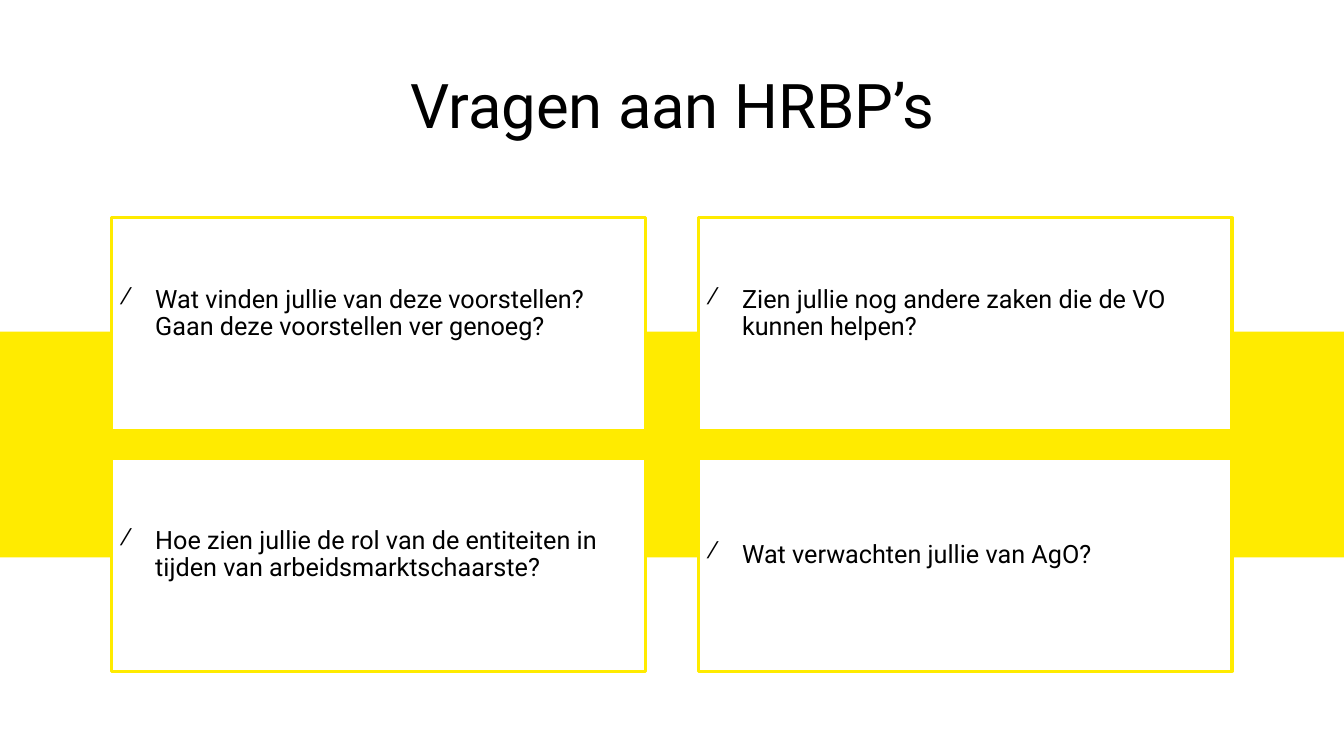
from lxml import etree
from pptx import Presentation
from pptx import util as u
from pptx.dml.color import RGBColor
from pptx.enum import shapes, text
from pptx.oxml import ns

COLORS = {"yellow": "FFEB00", "white": "FFFFFF", "black": "000000"}
TITLE_FONT = {"name": "Roboto", "size": u.Pt(44), "bold": False}
QUESTION_FONT = {"name": "Roboto", "size": u.Pt(18)}
TITLE_FRAME = {
    "margin_left": 0, "margin_right": 0, "margin_top": 0, "margin_bottom": 0,
    "vertical_anchor": text.MSO_ANCHOR.MIDDLE,
    "auto_size": text.MSO_AUTO_SIZE.NONE, "word_wrap": True,
}
QUESTION_FRAME = {
    **TITLE_FRAME,
    "margin_left": u.Inches(0.12), "margin_right": u.Inches(0.12),
    "margin_bottom": u.Inches(0.2),
}
QUESTIONS = [
    "Wat vinden jullie van deze voorstellen? Gaan deze voorstellen ver genoeg?",
    "Zien jullie nog andere zaken die de VO kunnen helpen?",
    "Hoe zien jullie de rol van de entiteiten in tijden van arbeidsmarktschaarste?",
    "Wat verwachten jullie van AgO?",
]


def color(name):
    return RGBColor.from_string(COLORS[name])


def apply_format(target, values):
    for attribute, value in values.items():
        setattr(target, attribute, value)


def format_font(paragraph, values):
    apply_format(paragraph.font, values)
    paragraph.font.color.rgb = color("black")


def add_bullet(paragraph, character, size, indent):
    properties = paragraph._p.get_or_add_pPr()
    properties.set("marL", str(u.Inches(indent)))
    properties.set("indent", str(u.Inches(-indent)))
    etree.SubElement(properties, ns.qn("a:buSzPct"), val=str(size * 1000))
    etree.SubElement(properties, ns.qn("a:buChar"), char=character)


def add_rectangle(slide, box, fill):
    rectangle = slide.shapes.add_shape(
        shapes.MSO_SHAPE.RECTANGLE, *map(u.Inches, box))
    rectangle.shadow.inherit = False
    rectangle.fill.solid()
    rectangle.fill.fore_color.rgb = color(fill)
    return rectangle


def add_band(slide, box):
    band = add_rectangle(slide, box, "yellow")
    band.line.fill.background()


def add_title(slide, box, wording):
    title = slide.shapes.title
    apply_format(title, dict(zip(("left", "top", "width", "height"),
                                 map(u.Inches, box))))
    apply_format(title.text_frame, TITLE_FRAME)
    heading = title.text_frame.paragraphs[0]
    heading.text = wording
    apply_format(heading, {"alignment": text.PP_ALIGN.CENTER,
                           "line_spacing": u.Pt(38)})
    format_font(heading, TITLE_FONT)


def add_question(slide, box, wording):
    card = add_rectangle(slide, box, "white")
    card.line.color.rgb = color("yellow")
    card.line.width = u.Pt(2.25)
    apply_format(card.text_frame, QUESTION_FRAME)
    question = card.text_frame.paragraphs[0]
    question.text = wording
    add_bullet(question, "⁄", 90, 0.31)
    apply_format(question, {"alignment": text.PP_ALIGN.LEFT,
                            "line_spacing": 0.9})
    format_font(question, QUESTION_FONT)


def add_question_grid(slide, box, gaps, questions):
    left, top, width, height = box
    gap_x, gap_y = gaps
    card_width = (width - gap_x) / 2
    card_height = (height - gap_y) / 2
    for index, wording in enumerate(questions):
        row, column = divmod(index, 2)
        add_question(slide, (left + column * (card_width + gap_x),
                             top + row * (card_height + gap_y),
                             card_width, card_height), wording)


def main():
    presentation = Presentation()
    presentation.slide_width = u.Inches(13.33)
    presentation.slide_height = u.Inches(7.5)
    slide = presentation.slides.add_slide(presentation.slide_layouts[5])
    add_band(slide, (0, 3.29, 13.33, 2.24))
    add_title(slide, (0.41, 0.47, 12.52, 1.33), "Vragen aan HRBP’s")
    add_question_grid(slide, (1.11, 2.16, 11.11, 4.5), (0.53, 0.28), QUESTIONS)
    presentation.save("out.pptx")


if __name__ == "__main__":
    main()
